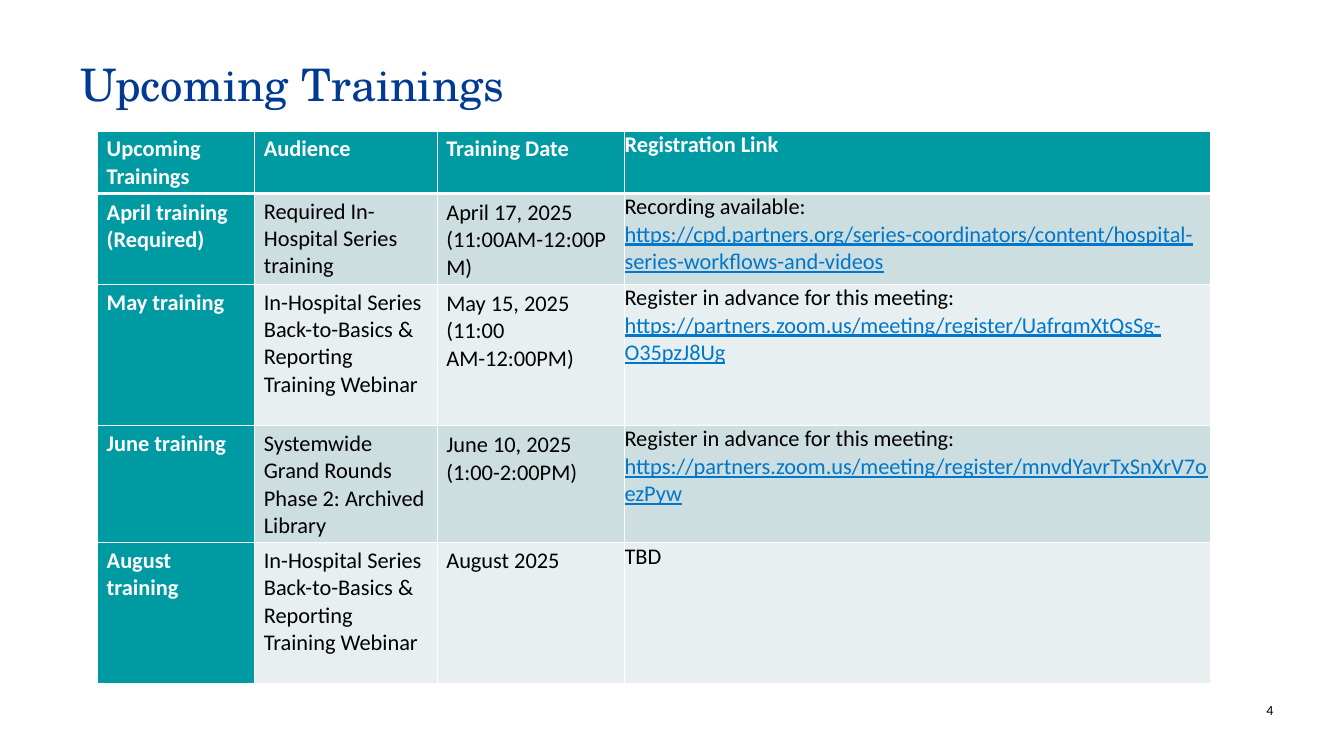
import pptx
import pptx.dml.color
import pptx.enum.text
import pptx.oxml
import pptx.oxml.ns
import pptx.util
from pptx.util import Cm

# Content: a cell is a list of paragraphs, a paragraph a list of lines
TITLE = "Upcoming Trainings"
PAGE_NUMBER = "4"
HEADER = ["Upcoming Trainings", "Audience", "Training Date", "Registration Link"]
WEBINAR = [["In-Hospital Series ", "Back-to-Basics & Reporting", "Training Webinar"]]
REGISTER = "Register in advance for this meeting: "
TRAININGS = [
    ([["April training"], ["(Required)"]],
     [["Required In-Hospital Series training"]],
     [["April 17, 2025"], ["(11:00AM-12:00PM)"]],
     [["Recording available: ",
       "https://cpd.partners.org/series-coordinators/content/hospital-series-workflows-and-videos"]]),
    ([["May training"]],
     WEBINAR,
     [["May 15, 2025"], ["(11:00 AM-12:00PM)"]],
     [[REGISTER, "https://partners.zoom.us/meeting/register/UafrqmXtQsSg-O35pzJ8Ug"]]),
    ([["June training"]],
     [["Systemwide Grand Rounds Phase 2: Archived Library"]],
     [["June 10, 2025"], ["(1:00-2:00PM)"]],
     [[REGISTER, "https://partners.zoom.us/meeting/register/mnvdYavrTxSnXrV7oezPyw"]]),
    ([["August training"]],
     WEBINAR,
     [["August 2025"]],
     [["TBD"]]),
]

# Look
COLORS = {"title": "003A93", "teal": "009AA3", "odd": "CCDEE0", "even": "E7EFF0",
          "link": "0077CA", "text": "000000", "white": "FFFFFF"}
BODY_FONT, TITLE_FONT = "Calibri", "TeX Gyre Schola"
COLUMN_WIDTHS = [3.96, 4.6, 4.72, 14.76]
ROW_HEIGHTS = [1.56, 2.29, 3.56, 2.95, 3.56]
TABLE_LEFT, TABLE_TOP = 2.46, 3.3
CELL_MARGINS = (0.23, 0.11)


def rgb(name):
    return pptx.dml.color.RGBColor.from_string(COLORS[name])


def write(paragraph, lines, size=16, font=BODY_FONT, color="text", bold=False,
          spacing=None, align=None):
    """Write lines into one paragraph; web addresses look like links."""
    paragraph.line_spacing = spacing
    paragraph.alignment = align
    for index, line in enumerate(lines):
        if index:
            paragraph.add_line_break()
        run = paragraph.add_run()
        run.text = line
        is_link = line.startswith("https:")
        run.font.name = font
        run.font.size = pptx.util.Pt(size)
        run.font.bold = bold
        run.font.underline = is_link
        run.font.color.rgb = rgb("link" if is_link else color)


def add_text(slide, box, text, margins, **text_format):
    shape = slide.shapes.add_textbox(*(Cm(length) for length in box))
    frame = shape.text_frame
    frame.word_wrap = True
    frame.margin_left = frame.margin_right = Cm(margins[0])
    frame.margin_top = frame.margin_bottom = Cm(margins[1])
    write(frame.paragraphs[0], [text], **text_format)


def set_borders(cell, bottom_width):
    properties = cell._tc.get_or_add_tcPr()
    widths = {"lnL": 1, "lnR": 1, "lnT": 1, "lnB": bottom_width}
    for position, (side, width) in enumerate(widths.items()):
        line = pptx.oxml.parse_xml(
            f'<a:{side} {pptx.oxml.ns.nsdecls("a")} w="{pptx.util.Pt(width)}"><a:solidFill>'
            f'<a:srgbClr val="{COLORS["white"]}"/></a:solidFill></a:{side}>')
        properties.insert(position, line)


def fill_cell(cell, paragraphs, row, column):
    is_heading = row == 0 or column == 0
    side, top = (0, 0) if column == 3 else CELL_MARGINS
    cell.margin_left = cell.margin_right = Cm(side)
    cell.margin_top = cell.margin_bottom = Cm(top)
    cell.fill.solid()
    cell.fill.fore_color.rgb = rgb("teal" if is_heading else "odd" if row % 2 else "even")
    set_borders(cell, 3 if row == 0 else 1)
    frame = cell.text_frame
    for index, lines in enumerate(paragraphs):
        paragraph = frame.add_paragraph() if index else frame.paragraphs[0]
        # The first of two stacked paragraphs is set a little looser
        spacing = 1.05 if index == 0 and len(paragraphs) > 1 else None
        write(paragraph, lines, color="white" if is_heading else "text",
              bold=is_heading, spacing=spacing)


def add_training_table(slide):
    rows = [[[[label]] for label in HEADER], *TRAININGS]
    table = slide.shapes.add_table(
        len(rows), len(HEADER), Cm(TABLE_LEFT), Cm(TABLE_TOP),
        Cm(sum(COLUMN_WIDTHS)), Cm(sum(ROW_HEIGHTS))).table
    for column, width in zip(table.columns, COLUMN_WIDTHS):
        column.width = Cm(width)
    for table_row, height in zip(table.rows, ROW_HEIGHTS):
        table_row.height = Cm(height)
    for row, cells in enumerate(rows):
        for column, paragraphs in enumerate(cells):
            fill_cell(table.cell(row, column), paragraphs, row, column)


def main():
    presentation = pptx.Presentation()
    presentation.slide_width, presentation.slide_height = Cm(33.87), Cm(19.05)
    slide = presentation.slides.add_slide(presentation.slide_layouts[6])

    # Page number, title and table
    add_text(slide, (31.12, 17.68, 0.97, 0.43), PAGE_NUMBER, (0, 0), size=10,
             align=pptx.enum.text.PP_ALIGN.RIGHT)
    add_text(slide, (1.78, 1.45, 30.28, 2.67), TITLE, (0.25, 0.13), size=32,
             font=TITLE_FONT, color="title", spacing=0.9)
    add_training_table(slide)

    presentation.save("out.pptx")


if __name__ == "__main__":
    main()
